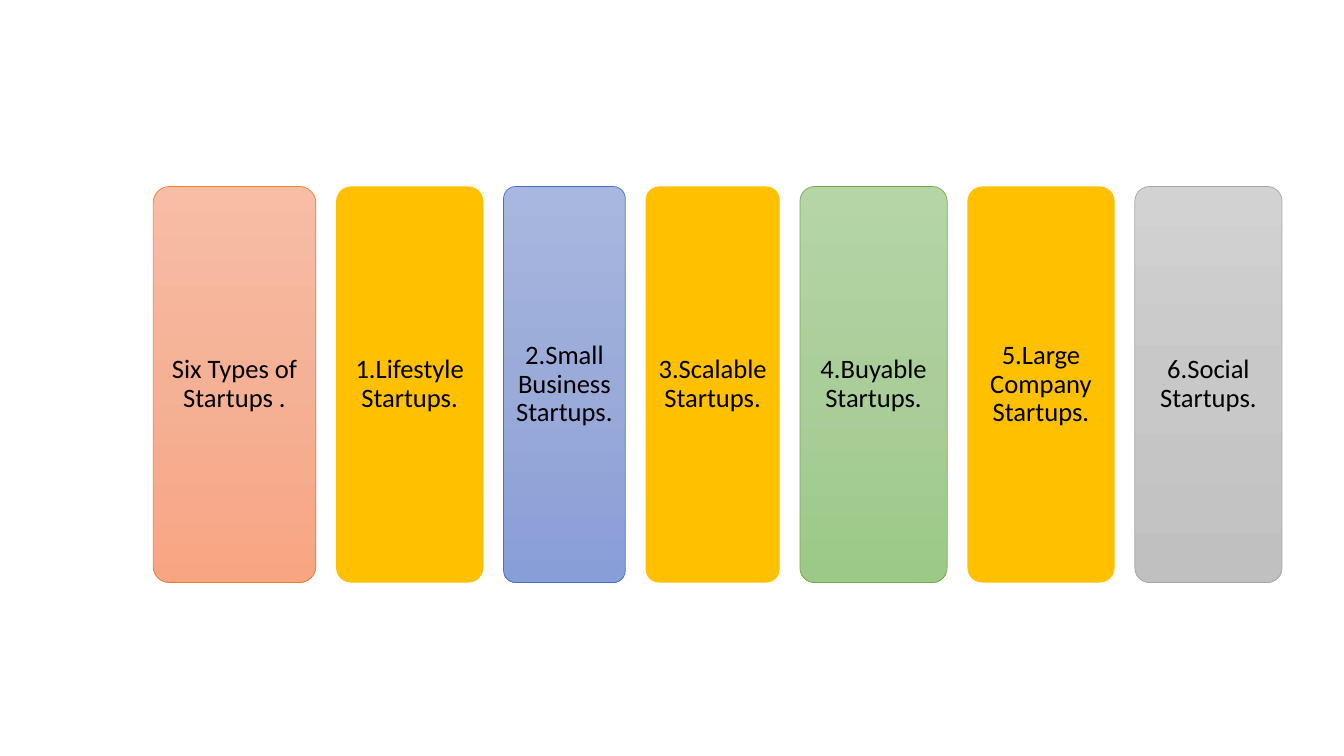
"""Build a slide that shows the six types of startups as a row of panels."""
import copy

import pptx
import pptx.dml.color
import pptx.enum.shapes
import pptx.enum.text
import pptx.oxml.ns
import pptx.util
from pptx.util import Cm

COLORS = {
    "text": "000000",
    "gold": ["FFC000"],
    "orange": ["F7BDA5", "F5B196", "F8A582"],
    "blue": ["A8B7DF", "9AABD9", "889ED7"],
    "green": ["B5D5A7", "AACE9A", "9CC987"],
    "gray": ["D2D2D2", "C8C8C8", "C0C0C0"],
    "orange line": "ED7D31",
    "blue line": "4472C4",
    "green line": "70AD47",
    "gray line": "A5A5A5",
}
PANELS = [
    ("Six Types of Startups .", 4.1, "orange"),
    ("1.Lifestyle Startups.", 3.71, "gold"),
    ("2.Small Business Startups.", 3.07, "blue"),
    ("3.Scalable Startups.", 3.38, "gold"),
    ("4.Buyable Startups.", 3.71, "green"),
    ("5.Large Company Startups.", 3.71, "gold"),
    ("6.Social Startups.", 3.71, "gray"),
]
LEFT, TOP, HEIGHT, GAP, INSET = 3.86, 4.7, 9.98, 0.51, 0.19


def rgb(value):
    return pptx.dml.color.RGBColor.from_string(value)


def paint_gradient(shape, colors):
    shape.fill.gradient()
    shape.fill.gradient_angle = 270
    stop_list = shape._element.spPr.find(".//" + pptx.oxml.ns.qn("a:gsLst"))
    stop_list.insert(1, copy.deepcopy(stop_list[0]))
    for index, stop in enumerate(shape.fill.gradient_stops):
        stop.position = index / 2
        stop.color.rgb = rgb(colors[index])


def add_panel(slide, left, width, text, color):
    shape = slide.shapes.add_shape(
        pptx.enum.shapes.MSO_SHAPE.ROUNDED_RECTANGLE,
        Cm(left), Cm(TOP), Cm(width), Cm(HEIGHT))
    shape.adjustments[0] = 0.1
    shape.shadow.inherit = False
    if color == "gold":
        shape.fill.solid()
        shape.fill.fore_color.rgb = rgb(COLORS[color][0])
        shape.line.fill.background()
    else:
        paint_gradient(shape, COLORS[color])
        shape.line.color.rgb = rgb(COLORS[color + " line"])
        shape.line.width = pptx.util.Pt(0.5)

    frame = shape.text_frame
    frame.text = text
    frame.word_wrap = True
    frame.vertical_anchor = pptx.enum.text.MSO_ANCHOR.MIDDLE
    frame.margin_left = frame.margin_right = Cm(INSET)
    frame.margin_top = frame.margin_bottom = Cm(INSET)
    paragraph = frame.paragraphs[0]
    paragraph.alignment = pptx.enum.text.PP_ALIGN.CENTER
    paragraph.line_spacing = 0.9
    font = paragraph.runs[0].font
    font.name = "Calibri"
    font.size = pptx.util.Pt(19)
    font.color.rgb = rgb(COLORS["text"])


def main():
    presentation = pptx.Presentation()
    presentation.slide_width = Cm(33.87)
    presentation.slide_height = Cm(19.05)
    slide = presentation.slides.add_slide(presentation.slide_layouts[6])
    left = LEFT
    for text, width, color in PANELS:
        add_panel(slide, left, width, text, color)
        left += width + GAP
    presentation.save("out.pptx")


if __name__ == "__main__":
    main()
